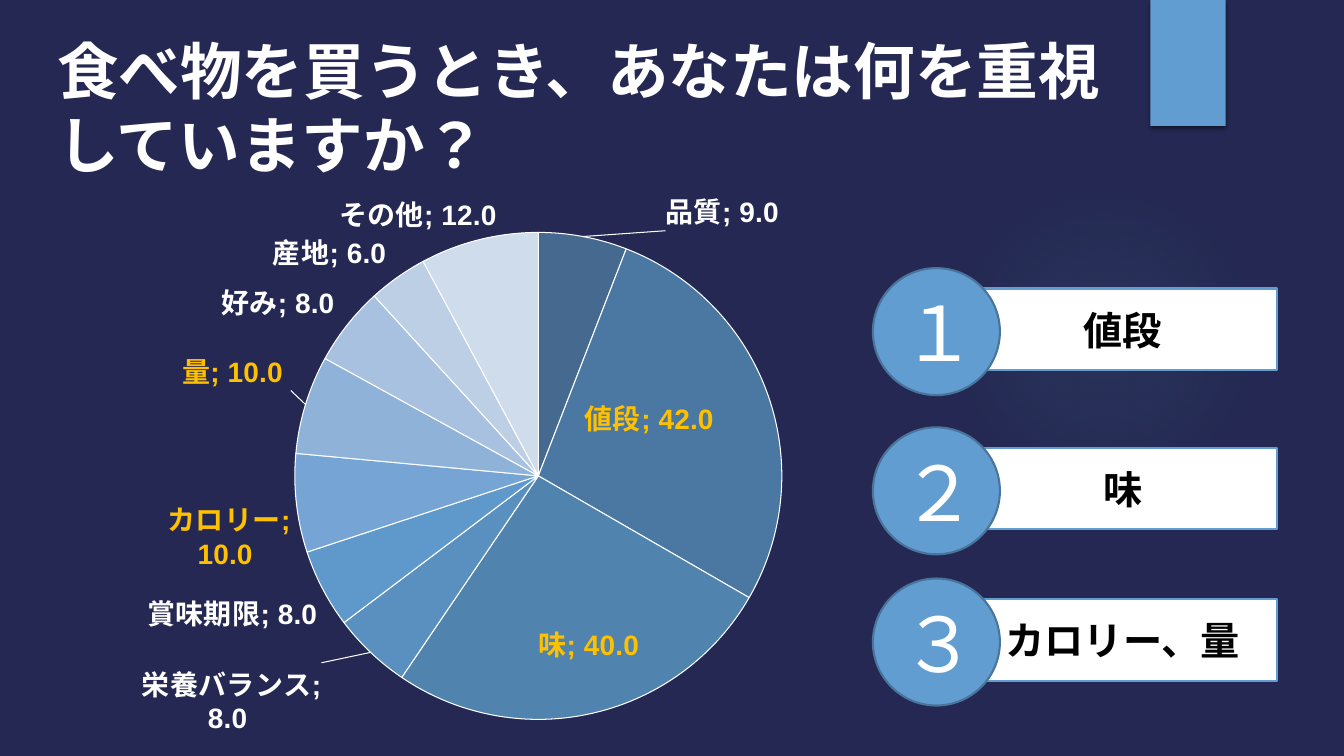
from pptx import Presentation
from pptx.chart.data import CategoryChartData
from pptx.dml.color import RGBColor
from pptx.enum.chart import XL_CHART_TYPE
from pptx.enum.lang import MSO_LANGUAGE_ID
from pptx.enum.shapes import MSO_SHAPE
from pptx.enum.text import MSO_ANCHOR, PP_ALIGN
from pptx.oxml import parse_xml
from pptx.oxml.ns import nsdecls, qn
from pptx.util import Inches, Pt

W, H = Inches(13.333), Inches(7.5)
C = {"bg": "242852", "blue": "629DD1", "edge": "49749B", "white": "FFFFFF",
     "black": "000000", "gold": "FFC000", "glow": "5AA2AE"}
SLICES = {"品質": (9, "46698F"), "値段": (42, "4A78A2"), "味": (40, "5084AF"),
          "栄養バランス": (8, "5990BF"), "賞味期限": (8, "5F99CC"),
          "カロリー": (10, "76A4D4"), "量": (10, "8FB2D9"),
          "好み": (8, "A9C1E0"), "産地": (6, "BDCFE5"), "その他": (12, "CFDCEC")}
MOVED = {"品質": (0.09, 0, "outEnd", "white"), "値段": (0, -0.03, "ctr", "gold"),
         "味": (0.03, 0.08, "ctr", "gold"),
         "栄養バランス": (-0.05, 0.01, "outEnd", "white"),
         "カロリー": (0, -0.01, "outEnd", "gold"),
         "量": (-0.01, -0.02, "outEnd", "gold"), "その他": (0.03, 0, "outEnd", "white")}
NUMBER = r"#,##0.0_);[Red]\(#,##0.0\)"
RANKS = [("１", "値段", 35.47), ("２", "味", 56.53), ("３", "カロリー、量", 76.53)]


def rgb(name):
    return RGBColor.from_string(C.get(name, name))


def box(x, y, w, h):
    """Turn percentages of the slide into left, top, width and height."""
    return int(W * x / 100), int(H * y / 100), int(W * w / 100), int(H * h / 100)


def add_block(s, kind, at, fill, line=None):
    """Add a filled preset shape without shadow."""
    sp = s.shapes.add_shape(kind, *box(*at))
    sp.shadow.inherit = False
    sp.fill.solid()
    sp.fill.fore_color.rgb = rgb(fill)
    if line:
        sp.line.color.rgb = rgb(line)
        sp.line.width = Pt(1.5)
    else:
        sp.line.fill.background()
    return sp


def write(sp, text, size, color, bold=False, font="Arial"):
    """Set one paragraph of text and format its run."""
    tf = sp.text_frame
    tf.word_wrap = True
    tf.text = text
    tf.vertical_anchor = MSO_ANCHOR.MIDDLE
    p = tf.paragraphs[0]
    p.alignment = PP_ALIGN.CENTER
    f = p.runs[0].font
    f.size, f.bold, f.name, f.color.rgb = Pt(size), bold, font, rgb(color)
    f.language_id = MSO_LANGUAGE_ID.JAPANESE
    return p


def add_glow(s):
    """Add the faint round light behind the ranking."""
    sp = add_block(s, MSO_SHAPE.OVAL, (70.6, 24.4, 23.1, 41.07), "glow")
    stops = "".join(f'<a:gs pos="{pos}000"><a:srgbClr val="{C["glow"]}">'
                    f'<a:alpha val="{alpha}000"/></a:srgbClr></a:gs>'
                    for pos, alpha in ((0, 7), (36, 6), (69, 0)))
    fill = sp._element.spPr.find(qn("a:solidFill"))
    fill.addprevious(parse_xml(
        f'<a:gradFill {nsdecls("a")}><a:gsLst>{stops}</a:gsLst><a:path path="circle">'
        '<a:fillToRect l="50000" t="50000" r="50000" b="50000"/></a:path></a:gradFill>'))
    sp._element.spPr.remove(fill)


def add_ribbon(s):
    """Add the ribbon hanging from the top edge."""
    sp = add_block(s, MSO_SHAPE.RECTANGLE, (85.6, 0, 5.6, 16.67), "blue")
    sp._element.spPr.find(qn("a:effectLst")).append(parse_xml(
        f'<a:outerShdw {nsdecls("a")} blurRad="38100" dist="25400" dir="5400000">'
        '<a:srgbClr val="000000"><a:alpha val="45000"/></a:srgbClr></a:outerShdw>'))


def label_xml(color, position):
    """Return the shared body of a data label."""
    shows = "".join(f'<c:show{part} val="{on}"/>' for part, on in (
        ("LegendKey", 0), ("Val", 1), ("CatName", 1), ("SerName", 0),
        ("Percent", 0), ("BubbleSize", 0)))
    return (f'<c:numFmt formatCode="{NUMBER}" sourceLinked="0"/>'
            '<c:spPr><a:noFill/><a:ln><a:noFill/></a:ln></c:spPr>'
            '<c:txPr><a:bodyPr/><a:p><a:pPr><a:defRPr sz="2000" b="1"><a:solidFill>'
            f'<a:srgbClr val="{C[color]}"/></a:solidFill><a:latin typeface="Arial"/>'
            '</a:defRPr></a:pPr><a:endParaRPr lang="ja-JP"/></a:p></c:txPr>'
            f'<c:dLblPos val="{position}"/>{shows}<c:separator>; </c:separator>')


def label_slices(ser):
    """Label every slice and shift the labels that need room."""
    points = ""
    for i, name in enumerate(SLICES):
        if name in MOVED:
            dx, dy, position, color = MOVED[name]
            points += (f'<c:dLbl><c:idx val="{i}"/><c:layout><c:manualLayout>'
                       f'<c:x val="{dx}"/><c:y val="{dy}"/></c:manualLayout></c:layout>'
                       f'{label_xml(color, position)}</c:dLbl>')
    leader = ('<c:showLeaderLines val="1"/><c:leaderLines><c:spPr><a:ln w="9525"><a:solidFill>'
              f'<a:srgbClr val="{C["white"]}"/></a:solidFill></a:ln></c:spPr></c:leaderLines>')
    ser._element.find(qn("c:cat")).addprevious(parse_xml(
        f'<c:dLbls {nsdecls("c", "a")}>{points}{label_xml("white", "outEnd")}{leader}</c:dLbls>'))


def add_pie(s):
    """Add the survey pie chart."""
    data = CategoryChartData(number_format=NUMBER)
    data.categories = list(SLICES)
    data.add_series("Series 1", [value for value, _ in SLICES.values()])
    chart = s.shapes.add_chart(XL_CHART_TYPE.PIE, *box(7.8, 19.47, 67.2, 80.53), data).chart
    chart.has_legend = chart.has_title = False
    chart.font.size, chart.font.name = Pt(10), "DejaVu Sans"
    chart.font.color.rgb = rgb("white")
    plot = chart.plots[0]
    plot.vary_by_categories = True
    ser = plot.series[0]
    for i, (_, color) in enumerate(SLICES.values()):
        fmt = ser.points[i].format
        fmt.fill.solid()
        fmt.fill.fore_color.rgb = rgb(color)
        fmt.line.color.rgb = rgb("white")
        fmt.line.width = Pt(0.75)
    label_slices(ser)
    area = chart._chartSpace.chart.plotArea
    for old in area.findall(qn("c:layout")):
        area.remove(old)
    area.insert(0, parse_xml(
        f'<c:layout {nsdecls("c")}><c:manualLayout><c:layoutTarget val="inner"/>'
        '<c:xMode val="edge"/><c:yMode val="edge"/><c:x val="0.2"/><c:y val="0.14"/>'
        '<c:w val="0.56"/><c:h val="0.8"/></c:manualLayout></c:layout>'))


def add_rank(s, number, text, top):
    """Add a numbered circle over its answer bar."""
    bar = add_block(s, MSO_SHAPE.RECTANGLE, (72.1, top + 2.7, 22.9, 10.8), "white", "blue")
    write(bar, text, 28, "black", bold=True)
    circle = add_block(s, MSO_SHAPE.OVAL, (64.95, top, 9.45, 16.8), "blue", "edge")
    write(circle, number, 54, "white")


def add_title(s, text):
    """Place and format the title placeholder."""
    sp = s.shapes.title
    sp.left, sp.top, sp.width, sp.height = box(3.5, 3.7, 81.2, 20.4)
    p = write(sp, text, 44, "white", bold=True, font="DejaVu Sans Mono")
    p.alignment = PP_ALIGN.LEFT
    p.line_spacing = 1.0
    sp.text_frame.vertical_anchor = MSO_ANCHOR.TOP


def main():
    prs = Presentation()
    prs.slide_width, prs.slide_height = W, H
    s = prs.slides.add_slide(prs.slide_layouts[5])
    s.background.fill.solid()
    s.background.fill.fore_color.rgb = rgb("bg")
    add_glow(s)
    add_ribbon(s)
    add_pie(s)
    for rank in RANKS:
        add_rank(s, *rank)
    add_title(s, "食べ物を買うとき、あなたは何を重視していますか？")
    prs.save("out.pptx")


if __name__ == "__main__":
    main()
